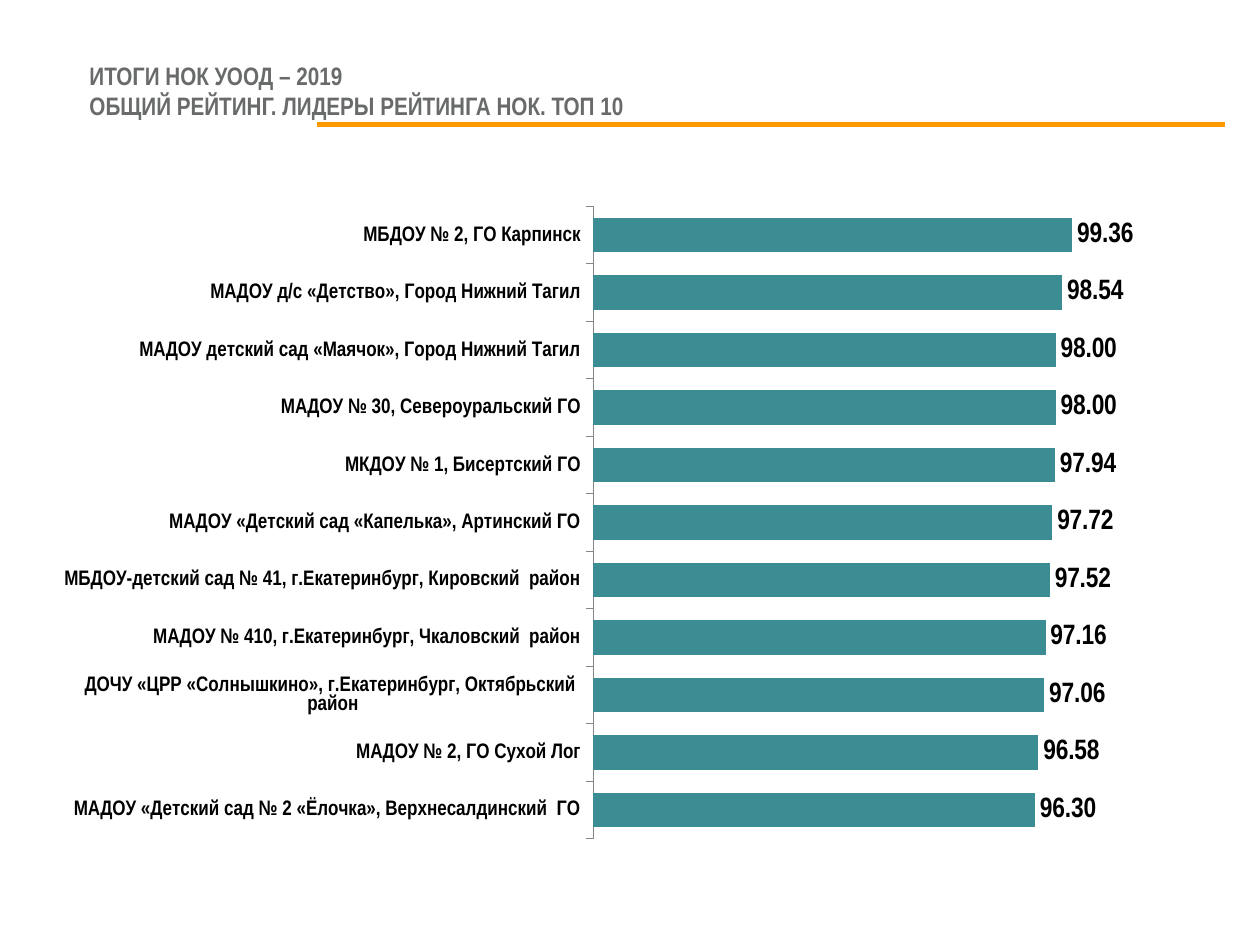
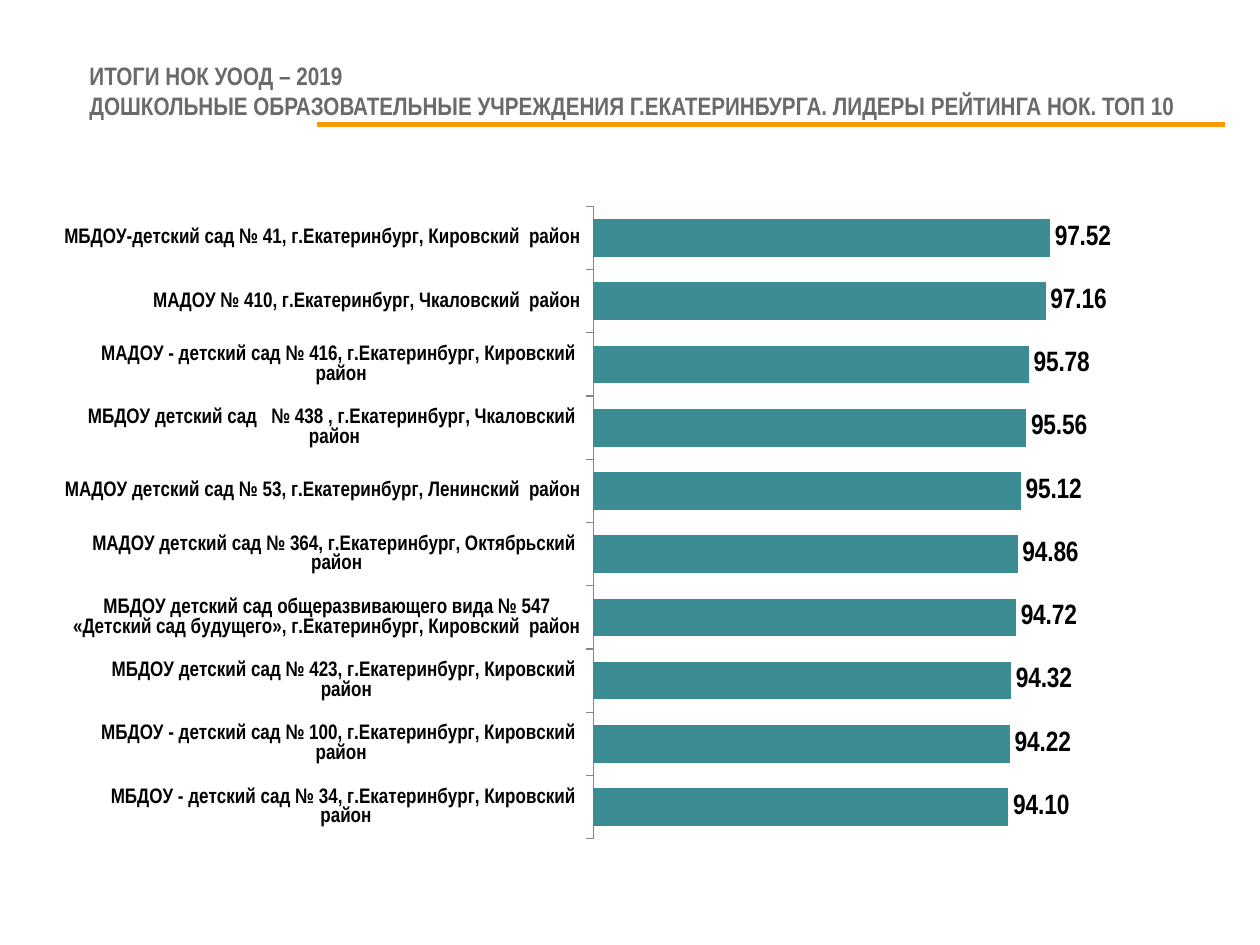
"""Build two slides that rank kindergartens by rating."""
from copy import deepcopy
from typing import NamedTuple

from lxml.etree import SubElement
from pptx import Presentation
from pptx.chart.data import CategoryChartData
from pptx.dml.color import RGBColor
from pptx.enum.chart import XL_CHART_TYPE, XL_LABEL_POSITION, XL_TICK_MARK
from pptx.enum.shapes import MSO_CONNECTOR
from pptx.enum.text import MSO_ANCHOR, MSO_AUTO_SIZE, PP_ALIGN
from pptx.oxml.ns import qn
from pptx.util import Inches, Pt

FONT = "Arial Narrow"
GREY, ORANGE, TEAL, BLACK, AXIS = "696B6B", "FF9900", "3C8C93", "000000", "868686"
HEAD = "ИТОГИ НОК УООД – 2019"
PLOT = {"x": 0.463, "y": 0.045, "w": 0.434, "h": 0.911}


class Score(NamedTuple):
    """A kindergarten and its rating."""
    name: str
    value: float


class Page(NamedTuple):
    """A slide: its subtitle and its ranked scores."""
    title: str
    scores: list[Score]


SHARED = [
    Score("МБДОУ-детский сад № 41, г.Екатеринбург, Кировский  район", 97.52),
    Score("МАДОУ № 410, г.Екатеринбург, Чкаловский  район", 97.16),
]
PAGES = [
    Page("ОБЩИЙ РЕЙТИНГ. ЛИДЕРЫ РЕЙТИНГА НОК. ТОП 10", [
        Score("МБДОУ № 2, ГО Карпинск", 99.36),
        Score("МАДОУ д/с «Детство», Город Нижний Тагил", 98.54),
        Score("МАДОУ детский сад «Маячок», Город Нижний Тагил", 98),
        Score("МАДОУ № 30, Североуральский ГО", 98),
        Score("МКДОУ № 1, Бисертский ГО", 97.94),
        Score("МАДОУ «Детский сад «Капелька», Артинский ГО", 97.72),
        *SHARED,
        Score("ДОЧУ «ЦРР «Солнышкино», г.Екатеринбург, Октябрьский  район", 97.06),
        Score("МАДОУ № 2, ГО Сухой Лог", 96.58),
        Score("МАДОУ «Детский сад № 2 «Ёлочка», Верхнесалдинский  ГО", 96.3),
    ]),
    Page("ДОШКОЛЬНЫЕ ОБРАЗОВАТЕЛЬНЫЕ УЧРЕЖДЕНИЯ Г.ЕКАТЕРИНБУРГА. "
         "ЛИДЕРЫ РЕЙТИНГА НОК. ТОП 10", [
        *SHARED,
        Score("МАДОУ - детский сад № 416, г.Екатеринбург, Кировский  район", 95.78),
        Score("МБДОУ детский сад   № 438 , г.Екатеринбург, Чкаловский  район", 95.56),
        Score("МАДОУ детский сад № 53, г.Екатеринбург, Ленинский  район", 95.12),
        Score("МАДОУ детский сад № 364, г.Екатеринбург, Октябрьский  район", 94.86),
        Score("МБДОУ детский сад общеразвивающего вида № 547 "
              "«Детский сад будущего», г.Екатеринбург, Кировский  район", 94.72),
        Score("МБДОУ детский сад № 423, г.Екатеринбург, Кировский  район", 94.32),
        Score("МБДОУ - детский сад № 100, г.Екатеринбург, Кировский  район", 94.22),
        Score("МБДОУ - детский сад № 34, г.Екатеринбург, Кировский  район", 94.1),
    ]),
]


def paint(color: str) -> RGBColor:
    """Turn a hex string into a colour."""
    return RGBColor.from_string(color)


def style(font, size: float, color: str = BLACK, bold: bool = False) -> None:
    """Format a font."""
    font.name, font.size, font.bold = FONT, Pt(size), bold
    font.color.rgb = paint(color)


def write(frame, text: str, *, align=PP_ALIGN.LEFT, anchor=MSO_ANCHOR.MIDDLE,
          **look) -> None:
    """Fill a text frame with one paragraph, broken at each newline."""
    frame.auto_size, frame.word_wrap = MSO_AUTO_SIZE.NONE, True
    frame.vertical_anchor = anchor
    para = frame.paragraphs[0]
    para.alignment = align
    para.text = text.replace("\n", "\v")
    for run in para.runs:
        style(run.font, **look)
    for gap in para._p.findall(qn("a:br")):
        gap.append(deepcopy(para.runs[0].font._rPr))


def add_head(slide, title: str) -> None:
    """Draw the title and the rule below it."""
    head = slide.shapes.title
    head.left, head.top = Inches(0.61), Inches(0.43)
    head.width, head.height = Inches(9), Inches(0.57)
    write(head.text_frame, f"{HEAD}\n{title}", size=14.4, color=GREY, bold=True)
    rule = slide.shapes.add_connector(
        MSO_CONNECTOR.STRAIGHT, Inches(2.52), Inches(0.99), Inches(9.72), Inches(0.99))
    rule.line.color.rgb, rule.line.width = paint(ORANGE), Pt(3)
    SubElement(rule._element.spPr, qn("a:effectLst"))


def place(chart) -> None:
    """Fix the inner plot area of a chart."""
    area = chart._chartSpace.chart.plotArea
    for old in area.findall(qn("c:layout")):
        area.remove(old)
    layout = SubElement(area, qn("c:layout"))
    area.insert(0, layout)
    manual = SubElement(layout, qn("c:manualLayout"))
    modes = {"layoutTarget": "inner", "xMode": "edge", "yMode": "edge"}
    for tag, value in {**modes, **PLOT}.items():
        SubElement(manual, qn(f"c:{tag}")).set("val", str(value))


def add_bars(slide, scores: list[Score]) -> None:
    """Draw the ranking as a bar chart."""
    data = CategoryChartData(number_format="#,##0.00")
    data.categories = [score.name for score in scores]
    data.add_series("Series 1", [score.value for score in scores])
    chart = slide.shapes.add_chart(
        XL_CHART_TYPE.BAR_CLUSTERED, Inches(0.51), Inches(1.39),
        Inches(8.98), Inches(5.51), data).chart
    chart.has_title = chart.has_legend = False
    style(chart.font, 14)
    place(chart)

    names = chart.category_axis
    names.reverse_order = True
    names.has_major_gridlines = False
    names.major_tick_mark = XL_TICK_MARK.OUTSIDE
    names.format.line.color.rgb = paint(AXIS)
    names.format.line.width = Pt(0.75)
    style(names.tick_labels.font, 12, bold=True)

    scale = chart.value_axis
    scale.minimum_scale, scale.maximum_scale, scale.major_unit = 60, 100, 10
    scale.has_major_gridlines = scale.visible = False

    plot = chart.plots[0]
    plot.gap_width, plot.vary_by_categories = 68, False
    fill = plot.series[0].format.fill
    fill.solid()
    fill.fore_color.rgb = paint(TEAL)
    plot.has_data_labels = True
    labels = plot.data_labels
    labels.show_value = True
    labels.number_format, labels.number_format_is_linked = "#,##0.00", False
    labels.position = XL_LABEL_POSITION.OUTSIDE_END
    style(labels.font, 16, bold=True)


def main() -> None:
    """Build and save the deck."""
    deck = Presentation()
    deck.slide_width, deck.slide_height = Inches(10), Inches(7.5)
    for page in PAGES:
        slide = deck.slides.add_slide(deck.slide_layouts[5])
        add_head(slide, page.title)
        add_bars(slide, page.scores)
    deck.save("out.pptx")


if __name__ == "__main__":
    main()
